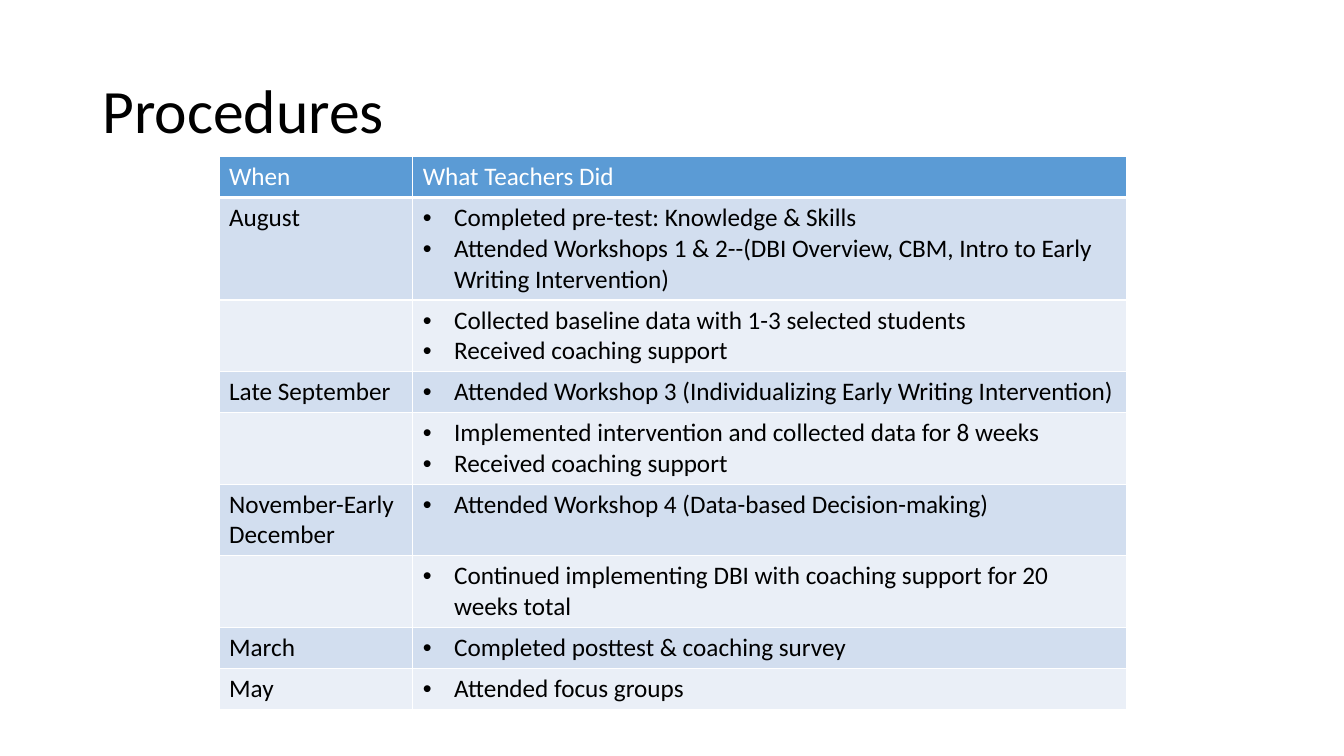
from lxml import etree
from pptx import Presentation
from pptx.dml.color import RGBColor
from pptx.enum.text import MSO_ANCHOR, PP_ALIGN
from pptx.oxml.ns import qn
from pptx.util import Cm, Pt

LEFT = PP_ALIGN.LEFT
MIDDLE = MSO_ANCHOR.MIDDLE
TITLE_ONLY = 5
FONT = "Calibri"
BLACK, WHITE = "000000", "FFFFFF"
HEADER_FILL = "5B9BD5"
BAND_FILLS = ("D2DEEF", "EAEFF7")
COLUMN_WIDTHS = (4.88, 17.98)
ROW_HEIGHT = 1.03
HEADINGS = ("When", "What Teachers Did")
SCHEDULE = [
    ("August", ["Completed pre-test: Knowledge & Skills",
                "Attended Workshops 1 & 2--(DBI Overview, CBM, Intro to Early Writing Intervention)"]),
    ("", ["Collected baseline data with 1-3 selected students",
          "Received coaching support"]),
    ("Late September", ["Attended Workshop 3 (Individualizing Early Writing Intervention)"]),
    ("", ["Implemented intervention and collected data for 8 weeks",
          "Received coaching support"]),
    ("November-Early December", ["Attended Workshop 4 (Data-based Decision-making)"]),
    ("", ["Continued implementing DBI with coaching support for 20 weeks total"]),
    ("March", ["Completed posttest & coaching survey"]),
    ("May", ["Attended focus groups"]),
]


def rgb(color):
    return RGBColor.from_string(color)


def format_runs(p, size, color):
    for r in p.runs:
        r.font.name = FONT
        r.font.size = Pt(size)
        r.font.bold = False
        r.font.color.rgb = rgb(color)


def add_bullet(p):
    pPr = p._p.get_or_add_pPr()
    pPr.set("marL", str(Cm(0.79)))
    pPr.set("indent", str(Cm(-0.79)))
    etree.SubElement(pPr, qn("a:buFont")).set("typeface", "Arial")
    etree.SubElement(pPr, qn("a:buChar")).set("char", "•")


def add_borders(cell, widths):
    """Draw white lines; widths maps a side (L, R, T, B) to points."""
    tcPr = cell._tc.get_or_add_tcPr()
    for i, (side, width) in enumerate(widths.items()):
        ln = etree.Element(qn(f"a:ln{side}"), w=str(Pt(width)))
        fill = etree.SubElement(ln, qn("a:solidFill"))
        etree.SubElement(fill, qn("a:srgbClr")).set("val", WHITE)
        tcPr.insert(i, ln)


def fill_cell(cell, lines, fill, color, bulleted=False):
    cell.fill.solid()
    cell.fill.fore_color.rgb = rgb(fill)
    tf = cell.text_frame
    tf.text = "\n".join(lines)
    for p in tf.paragraphs:
        format_runs(p, 18, color)
        if bulleted:
            add_bullet(p)


def add_title(s, text, left, top, width, height):
    title = s.shapes.title
    title.left, title.top = Cm(left), Cm(top)
    title.width, title.height = Cm(width), Cm(height)
    tf = title.text_frame
    tf.text = text
    tf.vertical_anchor = MIDDLE
    p = tf.paragraphs[0]
    p.alignment = LEFT
    p.line_spacing = 0.9
    format_runs(p, 44, BLACK)


def add_schedule(s, left, top, width, height):
    frame = s.shapes.add_table(len(SCHEDULE) + 1, len(HEADINGS),
                               Cm(left), Cm(top), Cm(width), Cm(height))
    table = frame.table
    for column, column_width in zip(table.columns, COLUMN_WIDTHS):
        column.width = Cm(column_width)
    for row in table.rows:
        row.height = Cm(ROW_HEIGHT)
    frame.height = Cm(height)

    for cell, heading in zip(table.rows[0].cells, HEADINGS):
        fill_cell(cell, [heading], HEADER_FILL, WHITE)
        add_borders(cell, {"L": 1, "R": 1, "T": 1, "B": 3})
    for i, (when, activities) in enumerate(SCHEDULE):
        fill = BAND_FILLS[i % 2]
        when_cell, activity_cell = table.rows[i + 1].cells
        fill_cell(when_cell, [when], fill, BLACK)
        fill_cell(activity_cell, activities, fill, BLACK, bulleted=True)
        for cell in (when_cell, activity_cell):
            add_borders(cell, {"L": 1, "R": 1, "B": 1})


def main():
    prs = Presentation()
    prs.slide_width, prs.slide_height = Cm(33.87), Cm(19.05)
    s = prs.slides.add_slide(prs.slide_layouts[TITLE_ONLY])
    add_title(s, "Procedures", 2.33, 1.01, 29.21, 3.68)
    add_schedule(s, 5.52, 3.95, sum(COLUMN_WIDTHS), 13.77)
    prs.save("out.pptx")


if __name__ == "__main__":
    main()
